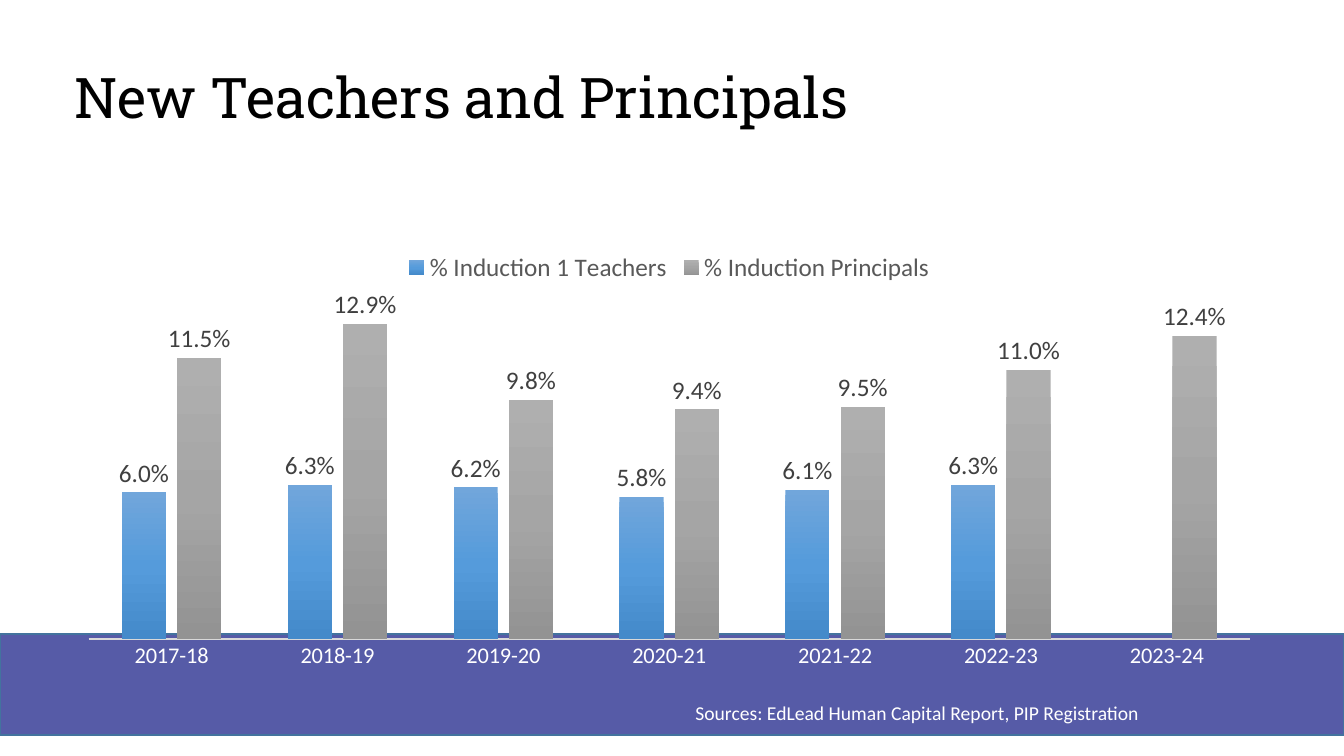
from lxml import etree
from pptx import Presentation
from pptx.chart.data import CategoryChartData
from pptx.dml.color import RGBColor
from pptx.enum.chart import XL_CHART_TYPE, XL_LABEL_POSITION, XL_LEGEND_POSITION, XL_TICK_MARK
from pptx.enum.shapes import MSO_SHAPE
from pptx.enum.text import MSO_ANCHOR
from pptx.oxml import parse_xml
from pptx.oxml.ns import nsdecls, qn
from pptx.util import Pt

COLORS = {
    "band": "565BA7", "band_line": "43739E", "title": "000000", "white": "FFFFFF",
    "axis_line": "D9D9D9", "legend": "595959", "label": "404040",
}
YEARS = ["2017-18", "2018-19", "2019-20", "2020-21", "2021-22", "2022-23", "2023-24"]
# Series name, values, gradient from top to bottom
SERIES = [
    ("% Induction 1 Teachers", [0.06, 0.063, 0.062, 0.058, 0.061, 0.063, 0],
     ["71A6DB", "559BDB", "448ACA"]),
    ("% Induction Principals", [0.115, 0.129, 0.098, 0.094, 0.095, 0.11, 0.124],
     ["AFAFAF", "A5A5A5", "939393"]),
]
PERCENT = "0.0%"


def color(name):
    return RGBColor.from_string(COLORS[name])


def set_font(font, size, color_name, name="Calibri"):
    font.name = name
    font.size = Pt(size)
    font.bold = False
    font.color.rgb = color(color_name)


def add_text(slide, text, left, top, width, height, *, size, color_name,
             font="Calibri", anchor=MSO_ANCHOR.TOP, spacing=1.0):
    box = slide.shapes.add_textbox(Pt(left), Pt(top), Pt(width), Pt(height))
    frame = box.text_frame
    frame.word_wrap = True
    frame.vertical_anchor = anchor
    paragraph = frame.paragraphs[0]
    paragraph.line_spacing = spacing
    run = paragraph.add_run()
    run.text = text
    set_font(run.font, size, color_name, font)


def add_band(slide, top, width, height):
    band = slide.shapes.add_shape(MSO_SHAPE.RECTANGLE, 0, Pt(top), Pt(width), Pt(height))
    band.shadow.inherit = False
    band.fill.solid()
    band.fill.fore_color.rgb = color("band")
    band.line.color.rgb = color("band_line")
    band.line.width = Pt(1)


def fill_gradient(series, hex_stops):
    """Fill the bars from top to bottom with evenly spaced stops."""
    step = 100000 // (len(hex_stops) - 1)
    stops = "".join(
        f'<a:gs pos="{index * step}"><a:srgbClr val="{value}"/></a:gs>'
        for index, value in enumerate(hex_stops))
    properties = series.format.fill._xPr
    properties.insert(0, parse_xml(
        f'<a:gradFill {nsdecls("a")} rotWithShape="1"><a:gsLst>{stops}</a:gsLst>'
        '<a:lin ang="5400000" scaled="0"/></a:gradFill>'))


def add_labels(series, values):
    labels = series.data_labels
    labels.show_value = True
    labels.number_format = PERCENT
    labels.number_format_is_linked = False
    labels.position = XL_LABEL_POSITION.OUTSIDE_END
    set_font(labels.font, 18, "label")
    # A year without data has no label
    blanks = [index for index, value in enumerate(values) if value == 0]
    for place, index in enumerate(blanks):
        labels._element.insert(place, parse_xml(
            f'<c:dLbl {nsdecls("c")}><c:idx val="{index}"/><c:delete val="1"/></c:dLbl>'))


def place_plot(chart, **fractions):
    """Fix the inner plot area, in fractions of the chart."""
    plot_area = chart._chartSpace.chart.plotArea
    for old in plot_area.findall(qn("c:layout")):
        plot_area.remove(old)
    layout = etree.Element(qn("c:layout"))
    manual = etree.SubElement(layout, qn("c:manualLayout"))
    settings = {"layoutTarget": "inner", "xMode": "edge", "yMode": "edge", **fractions}
    for tag, value in settings.items():
        etree.SubElement(manual, qn(f"c:{tag}")).set("val", str(value))
    plot_area.insert(0, layout)


def add_column_chart(slide, left, top, width, height):
    data = CategoryChartData(number_format=PERCENT)
    data.categories = YEARS
    for name, values, _ in SERIES:
        data.add_series(name, values)
    chart = slide.shapes.add_chart(
        XL_CHART_TYPE.COLUMN_CLUSTERED, Pt(left), Pt(top), Pt(width), Pt(height), data).chart
    set_font(chart.font, 10, "title")
    chart.has_title = False

    # Legend
    chart.has_legend = True
    chart.legend.position = XL_LEGEND_POSITION.TOP
    chart.legend.include_in_layout = False
    set_font(chart.legend.font, 18, "legend")

    # Axes
    category_axis = chart.category_axis
    category_axis.major_tick_mark = XL_TICK_MARK.NONE
    category_axis.format.line.color.rgb = color("axis_line")
    category_axis.format.line.width = Pt(1)
    set_font(category_axis.tick_labels.font, 16, "white")
    value_axis = chart.value_axis
    value_axis.visible = False
    value_axis.has_major_gridlines = False
    value_axis.minimum_scale = 0
    value_axis.maximum_scale = 0.14
    value_axis.tick_labels.number_format = PERCENT
    value_axis.tick_labels.number_format_is_linked = False

    # Columns
    plot = chart.plots[0]
    plot.gap_width = 150
    plot.overlap = -25
    plot.vary_by_categories = False
    for series, (_, values, hex_stops) in zip(plot.series, SERIES):
        fill_gradient(series, hex_stops)
        add_labels(series, values)
    place_plot(chart, x=0.02, y=0.13, w=0.96, h=0.78)


def main():
    presentation = Presentation()
    presentation.slide_width = Pt(960)
    presentation.slide_height = Pt(540)
    slide = presentation.slides.add_slide(presentation.slide_layouts[6])

    add_band(slide, 453, 960, 72)
    add_text(slide, "New Teachers and Principals", 46, 29, 864, 86, size=40,
             color_name="title", font="Roboto Slab", anchor=MSO_ANCHOR.MIDDLE, spacing=0.9)
    add_column_chart(slide, 46, 171.4, 864, 313.2)
    add_text(slide, "Sources: EdLead Human Capital Report, PIP Registration",
             489.6, 496.8, 450.7, 24.5, size=14, color_name="white")

    presentation.save("out.pptx")


if __name__ == "__main__":
    main()
